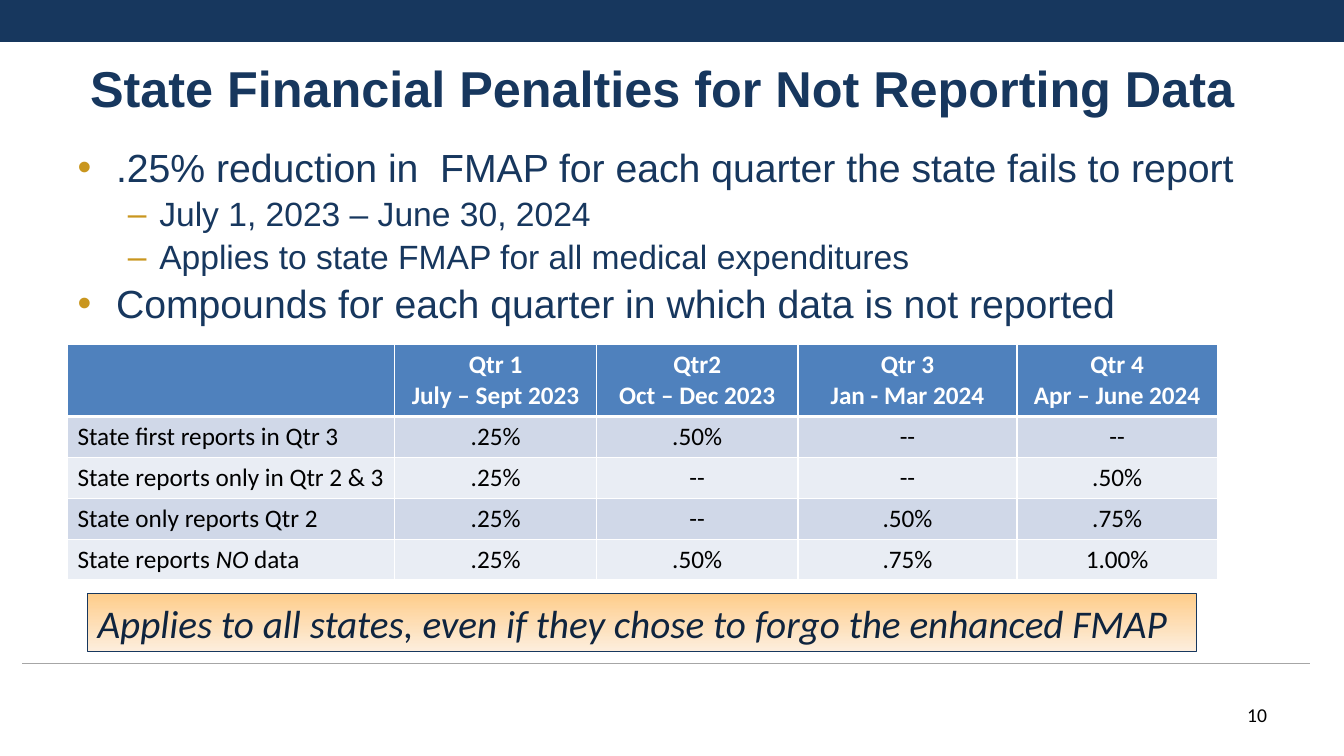
from lxml import etree
from pptx import Presentation
from pptx.dml.color import RGBColor
from pptx.enum.shapes import MSO_CONNECTOR, MSO_SHAPE
from pptx.enum.text import MSO_ANCHOR, MSO_AUTO_SIZE, PP_ALIGN
from pptx.oxml.ns import qn
from pptx.util import Cm, Pt

# Content
TITLE = "State Financial Penalties for Not Reporting Data"
BULLETS = [
    (0, ".25% reduction in  FMAP for each quarter the state fails to report"),
    (1, "July 1, 2023 – June 30, 2024"),
    (1, "Applies to state FMAP for all medical expenditures"),
    (0, "Compounds for each quarter in which data is not reported"),
]
# Asterisks enclose italic words
PENALTIES = [
    ["", "Qtr 1\nJuly – Sept 2023", "Qtr2\nOct – Dec 2023",
     "Qtr 3\nJan - Mar 2024", "Qtr 4\nApr – June 2024"],
    ["State first reports in Qtr 3", ".25%", ".50%", "--", "--"],
    ["State reports only in Qtr 2 & 3", ".25%", "--", "--", ".50%"],
    ["State only reports Qtr 2", ".25%", "--", ".50%", ".75%"],
    ["State reports *NO *data", ".25%", ".50%", ".75%", "1.00%"],
]
BANNER = "Applies to all states, even if they chose to forgo the enhanced FMAP"
PAGE = "10"

# Style
NAVY = RGBColor(0x17, 0x37, 0x5E)
INK = RGBColor(0x0F, 0x24, 0x3E)
GREY = RGBColor(0xA6, 0xA6, 0xA6)
GOLD = RGBColor(0xC9, 0x96, 0x1E)
WHITE = RGBColor(0xFF, 0xFF, 0xFF)
BLACK = RGBColor(0, 0, 0)
HEADER = RGBColor(0x4F, 0x81, 0xBD)
BANDS = [RGBColor(0xE9, 0xED, 0xF4), RGBColor(0xD0, 0xD8, 0xE8)]
BANNER_TOP = RGBColor(0xFE, 0xCD, 0x8B)
BANNER_BOTTOM = RGBColor(0xFD, 0xEE, 0xDD)
LEVELS = [("•", 28, 0.97, 0.97), ("–", 24, 2.06, 0.79)]  # mark, size, margin, hang
COL_WIDTHS = [8.25, 5.08, 5.08, 5.52, 5.05]
ROW_HEIGHTS = [1.76] + [1.03] * 4
LEFT, CENTER, RIGHT = PP_ALIGN.LEFT, PP_ALIGN.CENTER, PP_ALIGN.RIGHT


def place(sp, left, top, width, height):
    sp.left, sp.top, sp.width, sp.height = Cm(left), Cm(top), Cm(width), Cm(height)


def style(p, name, size, color, bold=False, italic=False):
    for r in p.runs:
        r.font.name, r.font.size = name, Pt(size)
        r.font.bold, r.font.italic = bold, italic
        r.font.color.rgb = color


def add_bullet(p, mark, margin, hang):
    pPr = p._p.get_or_add_pPr()
    pPr.set("marL", str(Cm(margin)))
    pPr.set("indent", str(-Cm(hang)))
    clr = etree.SubElement(pPr, qn("a:buClr"))
    etree.SubElement(clr, qn("a:srgbClr"), val=str(GOLD))
    etree.SubElement(pPr, qn("a:buFont"), typeface="Arial")
    etree.SubElement(pPr, qn("a:buChar"), char=mark)


def add_borders(cell, top, bottom):
    tcPr = cell._tc.get_or_add_tcPr()
    for side, width in (("L", 1), ("R", 1), ("T", top), ("B", bottom)):
        ln = etree.SubElement(tcPr, qn("a:ln" + side), w=str(Pt(width)))
        fill = etree.SubElement(ln, qn("a:solidFill"))
        etree.SubElement(fill, qn("a:srgbClr"), val=str(WHITE))


prs = Presentation()
prs.slide_width, prs.slide_height = Cm(33.87), Cm(19.05)
s = prs.slides.add_slide(prs.slide_layouts[1])

# Top band and footer rule
band = s.shapes.add_shape(MSO_SHAPE.RECTANGLE, 0, 0, prs.slide_width, Cm(1.06))
band.shadow.inherit = False
band.fill.solid()
band.fill.fore_color.rgb = NAVY
band.line.fill.background()

rule = s.shapes.add_connector(MSO_CONNECTOR.STRAIGHT, Cm(0.56), Cm(16.71), Cm(33.02), Cm(16.71))
rule.line.color.rgb = GREY
rule.line.width = Pt(0.75)
etree.SubElement(rule._element.spPr, qn("a:effectLst"))

# Title
title = s.shapes.title
place(title, 1.65, 1.47, 30.1, 1.65)
tf = title.text_frame
tf.text = TITLE
tf.auto_size = MSO_AUTO_SIZE.NONE
tf.vertical_anchor = MSO_ANCHOR.BOTTOM
p = tf.paragraphs[0]
p.alignment, p.line_spacing = CENTER, 0.9
style(p, "Arial", 36, NAVY, bold=True)

# Bullets
body = s.placeholders[1]
place(body, 1.7, 3.61, 30.48, 5.84)
tf = body.text_frame
tf.text = "\n".join(text for _, text in BULLETS)
tf.auto_size = MSO_AUTO_SIZE.NONE
for i, (p, (level, _)) in enumerate(zip(tf.paragraphs, BULLETS)):
    mark, size, margin, hang = LEVELS[level]
    p.level = level
    add_bullet(p, mark, margin, hang)
    p.line_spacing = 0.9
    p.space_before = Pt(0.2 * size if i else 0)
    style(p, "Arial", size, NAVY)

# Penalty table
frame = s.shapes.add_table(len(PENALTIES), len(COL_WIDTHS), Cm(1.7), Cm(8.69),
                           Cm(sum(COL_WIDTHS)), Cm(sum(ROW_HEIGHTS)))
table = frame.table
for col, width in zip(table.columns, COL_WIDTHS):
    col.width = Cm(width)
for i, (row, values) in enumerate(zip(table.rows, PENALTIES)):
    row.height = Cm(ROW_HEIGHTS[i])
    is_header = i == 0
    for j, (cell, value) in enumerate(zip(row.cells, values)):
        add_borders(cell, 3 if i == 1 else 1, 3 if is_header else 1)
        cell.fill.solid()
        cell.fill.fore_color.rgb = HEADER if is_header else BANDS[i % 2]
        plain, *rest = value.split("*")
        cell.text_frame.text = plain
        for p in cell.text_frame.paragraphs:
            p.alignment = CENTER if j else LEFT
            for piece in rest:
                p.add_run().text = piece
            style(p, "Calibri", 18, WHITE if is_header else BLACK, bold=is_header)
            for r in p.runs[1::2]:
                r.font.italic = True

# Banner
banner = s.shapes.add_shape(MSO_SHAPE.RECTANGLE, Cm(2.21), Cm(14.96), Cm(27.94), Cm(1.45))
banner.shadow.inherit = False
banner.fill.gradient()
banner.fill.gradient_angle = 270
for stop, position, color in zip(banner.fill.gradient_stops, (0, 1), (BANNER_TOP, BANNER_BOTTOM)):
    stop.position, stop.color.rgb = position, color
banner.line.color.rgb = NAVY
banner.line.width = Pt(0.75)
tf = banner.text_frame
tf.text = BANNER
tf.word_wrap = True
tf.paragraphs[0].alignment = LEFT
style(tf.paragraphs[0], "Calibri", 28, INK, italic=True)

# Page number
tf = s.shapes.add_textbox(Cm(29.64), Cm(17.58), Cm(2.54), Cm(1.02)).text_frame
tf.text = PAGE
tf.word_wrap = True
tf.paragraphs[0].alignment = RIGHT
style(tf.paragraphs[0], "Calibri", 14, BLACK)

prs.save("out.pptx")
